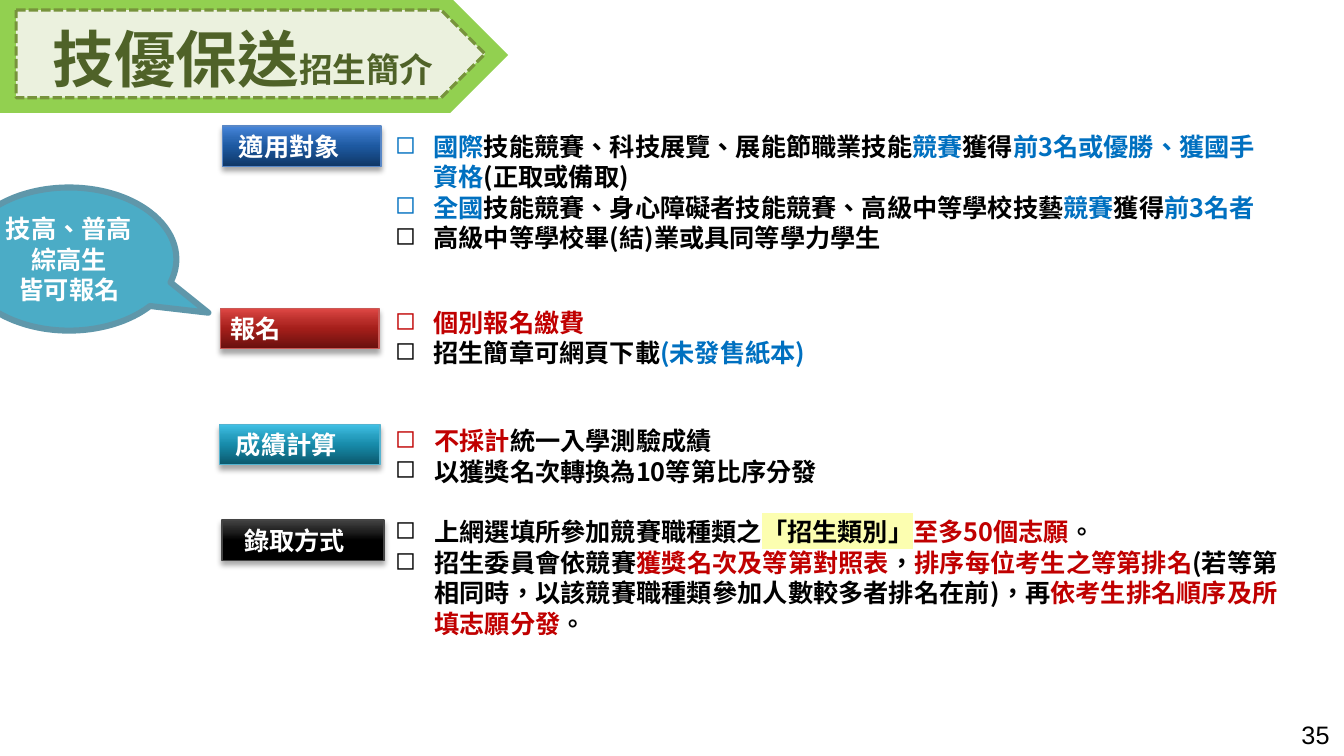
"""Build the admission overview slide for skill-based recommendation."""
from lxml import etree
from pptx import Presentation
from pptx.dml.color import RGBColor
from pptx.enum.dml import MSO_LINE
from pptx.enum.shapes import MSO_SHAPE
from pptx.enum.text import MSO_ANCHOR, MSO_AUTO_SIZE, PP_ALIGN
from pptx.oxml import parse_xml
from pptx.oxml.ns import nsdecls, qn
from pptx.util import Inches, Pt

PENTAGON = MSO_SHAPE.PENTAGON
RECTANGLE = MSO_SHAPE.RECTANGLE
CALLOUT = MSO_SHAPE.OVAL_CALLOUT
DASH = MSO_LINE.SQUARE_DOT
MIDDLE = MSO_ANCHOR.MIDDLE
LEFT, CENTER, JUSTIFY = PP_ALIGN.LEFT, PP_ALIGN.CENTER, PP_ALIGN.JUSTIFY
FONT = "Noto Sans CJK SC"
LINE_PITCH = Pt(21.7)
COLORS = {
    "black": "000000", "white": "FFFFFF", "blue": "0070C0", "red": "C00000",
    "highlight": "FCFEB0", "green": "92D050", "pale": "EBF1DE",
    "dash": "77933C", "title": "4F6228", "callout": "4BACC6", "callout_line": "5F97AA",
}


def add_run(paragraph, text, color, size=18, highlight=None):
    """Append one bold run to a paragraph."""
    run = paragraph.add_run()
    run.text = text
    run.font.size = Pt(size)
    run.font.bold = True
    run.font.color.rgb = RGBColor.from_string(COLORS[color])
    run.font.name = FONT
    properties = run._r.get_or_add_rPr()
    properties.set("lang", "zh-TW")
    etree.SubElement(properties, qn("a:ea"), typeface=FONT)
    if highlight:
        mark = parse_xml(f'<a:highlight {nsdecls("a")}><a:srgbClr val="{COLORS[highlight]}"/></a:highlight>')
        properties.find(qn("a:solidFill")).addnext(mark)


def add_filled_shape(kind, box, fill=None, line=None, width=0):
    """Add a shadowless shape with an optional solid fill and outline."""
    shape = slide.shapes.add_shape(kind, *[Inches(value) for value in box])
    shape.shadow.inherit = False
    if fill:
        shape.fill.solid()
        shape.fill.fore_color.rgb = RGBColor.from_string(fill)
    if line:
        shape.line.color.rgb = RGBColor.from_string(line)
        shape.line.width = Pt(width)
    else:
        shape.line.fill.background()
    return shape


presentation = Presentation()
presentation.slide_width, presentation.slide_height = Inches(13.33), Inches(7.5)
slide = presentation.slides.add_slide(presentation.slide_layouts[5])

number_box = slide.shapes.add_textbox(Inches(12.81), Inches(7.09), Inches(0.52), Inches(0.4))
number = number_box.text_frame.paragraphs[0].add_run()
number.text = "35"
number.font.size = Pt(18)
number.font.name = "Arial"
number.font.color.rgb = RGBColor.from_string(COLORS["black"])

callout = add_filled_shape(CALLOUT, (-0.38, 1.86, 2.13, 1.42), COLORS["callout"], COLORS["callout_line"], 4.33)
callout.adjustments[0], callout.adjustments[1] = 0.649, 0.375
callout_frame = callout.text_frame
callout_frame.word_wrap = True
callout_frame.vertical_anchor = MIDDLE
callout_frame.margin_left = callout_frame.margin_right = 0
for index, text in enumerate(["技高、普高", "綜高生", "皆可報名"]):
    paragraph = callout_frame.add_paragraph() if index else callout_frame.paragraphs[0]
    paragraph.alignment = CENTER
    paragraph.line_spacing = LINE_PITCH
    add_run(paragraph, text, "white")

labels = [
    ("適用對象", (2.21, 1.25, 1.57, 0.4), 0.16, "5887C6", ["0F3766", "1D59A1", "2D6AB6", "4786DB"]),
    ("報名", (2.19, 3.06, 1.57, 0.4), 0.1, "C95956", ["68100E", "A41E1A", "B92E2A", "DF4845"]),
    ("成績計算", (2.18, 4.21, 1.59, 0.4), 0.16, "54B3CF", ["0B586C", "178BAA", "279FC0", "41C1E6"]),
    ("錄取方式", (2.2, 5.16, 1.61, 0.4), 0.22, "444444", ["000000", "000000", "1D1D1D", "424242"]),
]
for text, box, inset, line, gradient in labels:
    label = add_filled_shape(RECTANGLE, box, line=line, width=1)
    stops = "".join(
        f'<a:gs pos="{position * 1000}"><a:srgbClr val="{color}"/></a:gs>'
        for position, color in zip((0, 50, 70, 100), gradient)
    )
    properties = label._element.spPr
    properties.find(qn("a:prstGeom")).addnext(parse_xml(
        f'<a:gradFill {nsdecls("a")}><a:gsLst>{stops}</a:gsLst><a:lin ang="16200000" scaled="0"/></a:gradFill>'))
    properties.find(qn("a:effectLst")).append(parse_xml(
        f'<a:outerShdw {nsdecls("a")} blurRad="{Pt(4)}" dist="{Pt(3)}" dir="5400000" rotWithShape="0">'
        '<a:srgbClr val="000000"><a:alpha val="35000"/></a:srgbClr></a:outerShdw>'))
    frame = label.text_frame
    frame.word_wrap = True
    frame.vertical_anchor = MIDDLE
    frame.margin_left = Inches(inset)
    frame.paragraphs[0].alignment = LEFT
    frame.paragraphs[0].line_spacing = LINE_PITCH
    add_run(frame.paragraphs[0], text, "white")

bullet_lists = [
    ((3.82, 1.25, 8.92, 3.84), 0.38, [
        (0, LEFT, [("國際", "blue"), ("技能競賽、科技展覽、展能節職業技能", "black"), ("競賽", "blue"),
                   ("獲得", "black"), ("前3名或優勝、獲國手資格", "blue"), ("(正取或備取)", "black")]),
        (0, LEFT, [("全國", "blue"), ("技能競賽、身心障礙者技能競賽、高級中等學校技藝", "black"),
                   ("競賽", "blue"), ("獲得", "black"), ("前3名者", "blue")]),
        (0, LEFT, [("高級中等學校畢(結)業或具同等學力學生", "black")]),
        (39, LEFT, [("個別報名繳費", "red")]),
        (0, LEFT, [("招生簡章可網頁下載", "black"), ("(未發售紙本)", "blue")]),
    ]),
    ((3.82, 4.17, 8.95, 2.57), 0.39, [
        (0, LEFT, [("不採計", "red"), ("統一入學測驗成績", "black")]),
        (0, LEFT, [("以獲獎名次轉換為10等第比序分發", "black")]),
        (21.7, LEFT, [("上網選填所參加競賽職種類之", "black"), ("「招生類別」", "black", 18, "highlight"),
                      ("至多50個志願", "red"), ("。", "black")]),
        (0, JUSTIFY, [("招生委員會依競賽", "black"), ("獲獎名次及等第對照表", "red"), ("，", "black"),
                      ("排序每位考生之等第排名", "red"),
                      ("(若等第相同時，以該競賽職種類參加人數較多者排名在前)，再", "black"),
                      ("依考生排名順序及所填志願分發", "red"), ("。", "black")]),
    ]),
]
for box, indent, items in bullet_lists:
    frame = slide.shapes.add_textbox(*[Inches(value) for value in box]).text_frame
    frame.word_wrap = True
    for index, (space_before, alignment, runs) in enumerate(items):
        paragraph = frame.add_paragraph() if index else frame.paragraphs[0]
        properties = paragraph._p.get_or_add_pPr()
        properties.set("marL", str(Inches(indent)))
        properties.set("indent", str(-Inches(indent)))
        etree.SubElement(properties, qn("a:buChar"), char="◻")
        paragraph.alignment = alignment
        paragraph.line_spacing = LINE_PITCH
        paragraph.space_before = Pt(space_before)
        for run in runs:
            add_run(paragraph, *run)

add_filled_shape(PENTAGON, (0, -0.03, 5.04, 1.15), COLORS["green"])
banner_box = (0.16, 0.1, 4.65, 0.87)
banner = add_filled_shape(PENTAGON, banner_box, COLORS["pale"], COLORS["dash"], 2.25)
banner.line.dash_style = DASH

title = slide.shapes.title
title.left, title.top, title.width, title.height = [Inches(value) for value in banner_box]
slide.shapes._spTree.append(title._element)
title_frame = title.text_frame
title_frame.auto_size = MSO_AUTO_SIZE.NONE
title_frame.word_wrap = True
title_frame.vertical_anchor = MIDDLE
title_frame.margin_left = Inches(0.36)
title_paragraph = title_frame.paragraphs[0]
title_paragraph.alignment = LEFT
title_paragraph.line_spacing = Pt(58)
add_run(title_paragraph, "技優保送", "title", 44)
add_run(title_paragraph, "招生簡介", "title", 24)

presentation.save("out.pptx")
